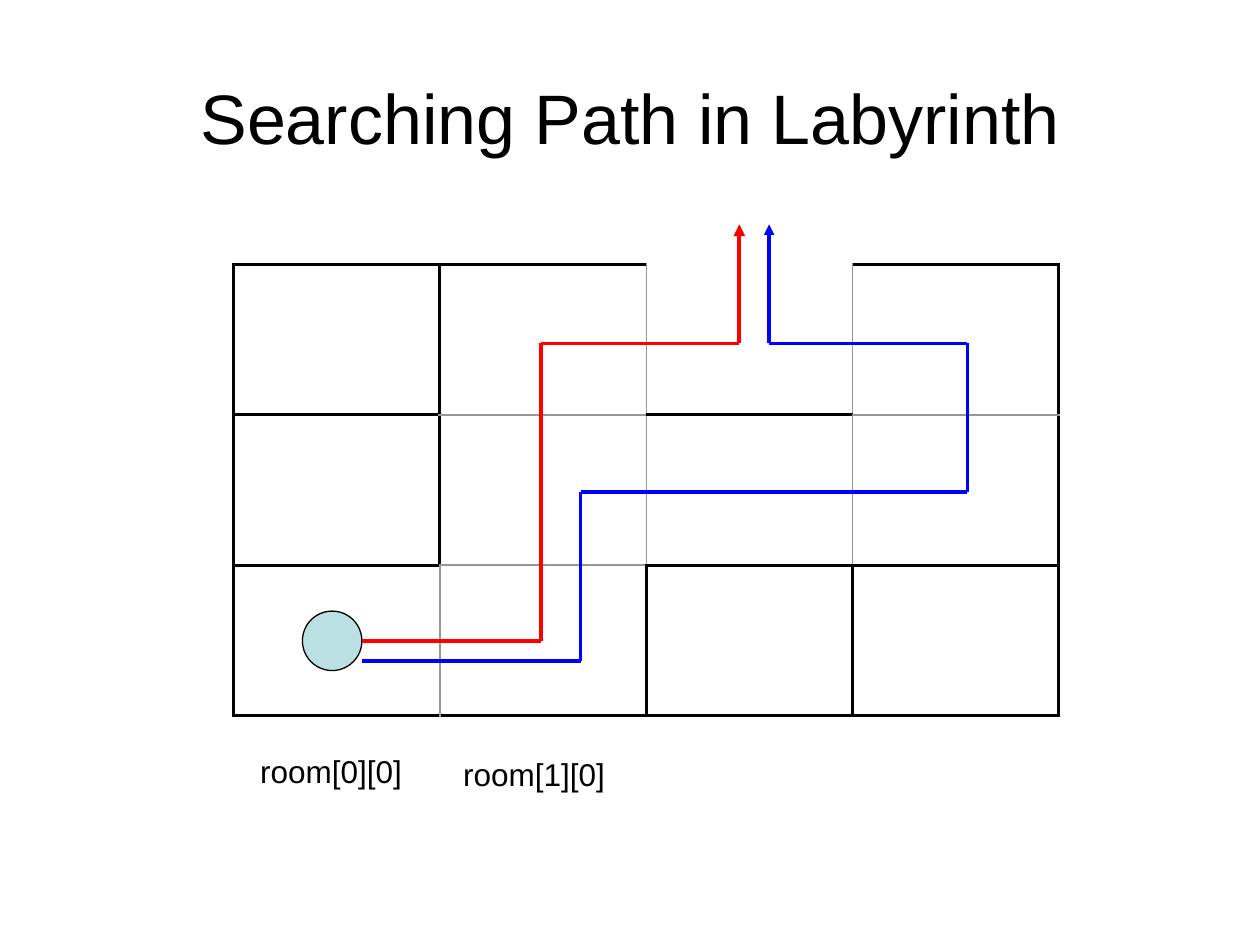
from dataclasses import dataclass
from itertools import pairwise

from lxml import etree
from pptx import Presentation
from pptx.dml.color import RGBColor
from pptx.enum import shapes, text
from pptx.oxml import ns
from pptx.util import Pt

BLACK = RGBColor(0x00, 0x00, 0x00)
GRAY = RGBColor(0x96, 0x96, 0x96)
RED = RGBColor(0xFF, 0x00, 0x00)
BLUE = RGBColor(0x00, 0x00, 0xFF)
TEAL = RGBColor(0xBB, 0xE0, 0xE3)

# Sides of each room as left, top, right, bottom: w wall, o open, - nothing
ROOMS = [
    ["wwww", "wwoo", "o-ow", "owwo"],
    ["wwww", "wooo", "owow", "ooww"],
    ["wwow", "ooww", "wwww", "wwww"],
]
SIDES = {"lnL": 0, "lnR": 2, "lnT": 1, "lnB": 3}
EDGES = {"w": (BLACK, 2), "o": (GRAY, 1)}
ROOM_W, ROOM_H = 117.9, 85.9


@dataclass
class Route:
    color: RGBColor
    tip: float  # width of the arrow at the end
    points: list[tuple[float, float]]


@dataclass
class Label:
    words: str
    left: float
    top: float


ROUTES = [
    Route(RED, 2.25, [(206.8, 366.3), (309.1, 366.3), (309.1, 196.2),
                      (422.5, 196.2), (422.5, 128.2)]),
    Route(BLUE, 2, [(206.8, 377.7), (331.8, 377.7), (331.8, 281.3),
                    (552.8, 281.3), (552.8, 196.2), (439.5, 196.2),
                    (439.5, 128.2)]),
]
LABELS = [Label("room[0][0]", 141.6, 426), Label("room[1][0]", 257.6, 427.8)]


def add(parent, tag: str, **attrs: str):
    return etree.SubElement(parent, ns.qn(f"a:{tag}"), attrs)


def style(obj, **values) -> None:
    for name, value in values.items():
        setattr(obj, name, value)


def write(frame, words: str, size: float, align) -> None:
    para = frame.paragraphs[0]
    para.alignment = align
    run = para.add_run()
    run.text = words
    style(run.font, name="Arial", size=Pt(size))
    run.font.color.rgb = BLACK


def edge(cell, codes: str) -> None:
    props = cell._tc.get_or_add_tcPr()
    for tag, spot in SIDES.items():
        if codes[spot] in EDGES:
            color, width = EDGES[codes[spot]]
            line = add(props, tag, w=str(Pt(width)))
            add(add(line, "solidFill"), "srgbClr", val=str(color))
        else:
            add(add(props, tag, w="0"), "noFill")
    cell.fill.background()


def maze(slide) -> None:
    rows, cols = len(ROOMS), len(ROOMS[0])
    table = slide.shapes.add_table(
        rows, cols, Pt(133.5), Pt(151.2), Pt(cols * ROOM_W), Pt(rows * ROOM_H)
    ).table
    style(table, first_row=False, horz_banding=False)
    for row, line in zip(table.rows, ROOMS):
        row.height = Pt(ROOM_H)
        for cell, codes in zip(row.cells, line):
            edge(cell, codes)
    for col in table.columns:
        col.width = Pt(ROOM_W)


def trace(slide, route: Route) -> None:
    for start, end in pairwise(route.points):
        last = end == route.points[-1]
        link = slide.shapes.add_connector(
            shapes.MSO_CONNECTOR.STRAIGHT, *map(Pt, start + end))
        link.line.color.rgb = route.color
        link.line.width = Pt(route.tip if last else 2)
        if last:
            add(link.line._get_or_add_ln(), "tailEnd", type="triangle")
        add(link._element.spPr, "effectLst")


def note(slide, label: Label) -> None:
    box = slide.shapes.add_textbox(
        Pt(label.left), Pt(label.top), Pt(96.6), Pt(28.8))
    style(box.text_frame, word_wrap=False,
          auto_size=text.MSO_AUTO_SIZE.SHAPE_TO_FIT_TEXT)
    write(box.text_frame, label.words, 18, text.PP_ALIGN.LEFT)


def main() -> None:
    deck = Presentation()
    style(deck, slide_width=Pt(720), slide_height=Pt(540))
    slide = deck.slides.add_slide(deck.slide_layouts[5])

    # Title
    title = slide.shapes.title
    style(title, left=Pt(36), top=Pt(21.6), width=Pt(648), height=Pt(90))
    title.text_frame.vertical_anchor = text.MSO_ANCHOR.MIDDLE
    write(title.text_frame, "Searching Path in Labyrinth", 40,
          text.PP_ALIGN.CENTER)

    # Labyrinth and starting point
    maze(slide)
    ball = slide.shapes.add_shape(
        shapes.MSO_SHAPE.OVAL, Pt(172.8), Pt(349.2), Pt(34), Pt(34))
    ball.shadow.inherit = False
    ball.fill.solid()
    ball.fill.fore_color.rgb = TEAL
    ball.line.color.rgb = BLACK
    ball.line.width = Pt(0.75)

    # Ways out and room names
    for route in ROUTES:
        trace(slide, route)
    for label in LABELS:
        note(slide, label)

    deck.save("out.pptx")


if __name__ == "__main__":
    main()
